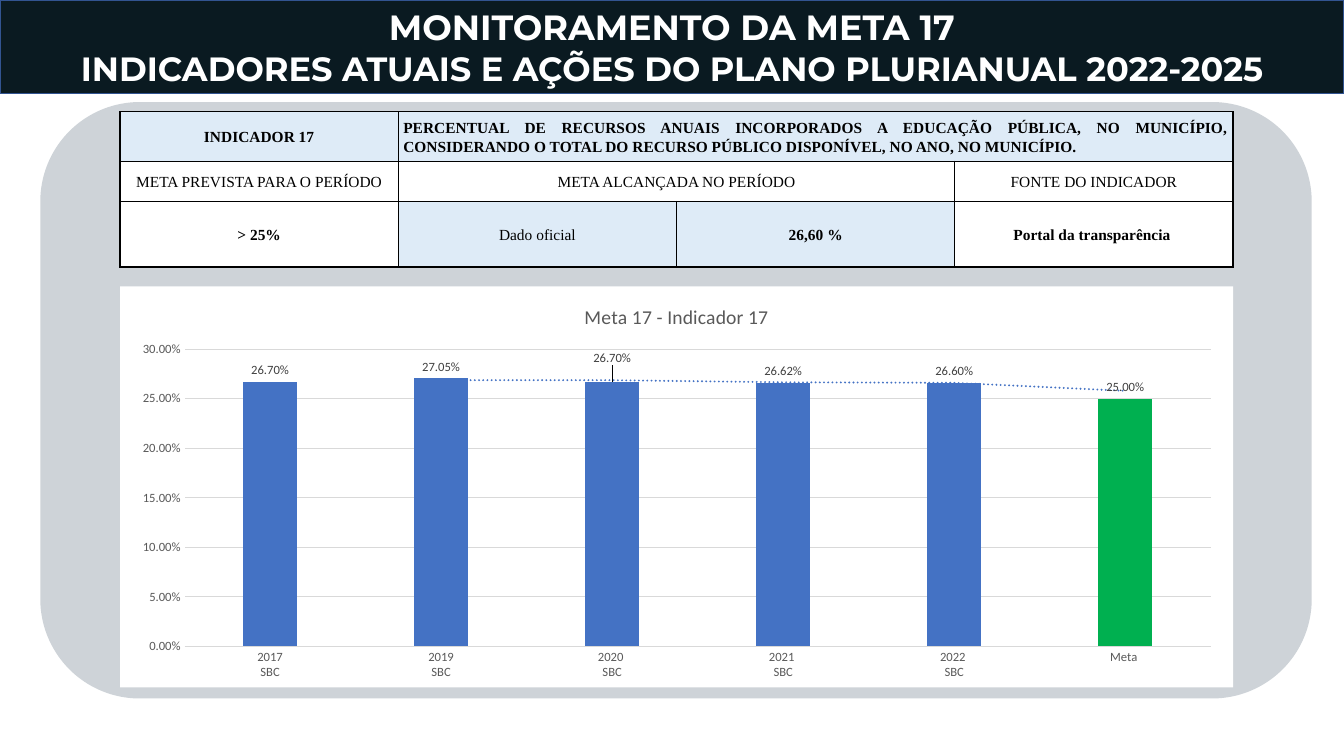
from lxml import etree
from pptx import Presentation
from pptx.chart.data import CategoryChartData
from pptx.dml.color import RGBColor
from pptx.enum.chart import XL_CHART_TYPE as Kind, XL_LABEL_POSITION as Spot, XL_TICK_MARK as Tick
from pptx.enum.shapes import MSO_SHAPE as Form
from pptx.enum.text import MSO_ANCHOR as Anchor, PP_ALIGN as Align
from pptx.oxml import parse_xml
from pptx.oxml.ns import qn
from pptx.util import Inches, Pt

WIDE, HIGH = Inches(13.33), Inches(7.5)
LEFT, SPAN = 0.0893, 0.8282  # shared by table and chart
NS = ('xmlns:a="http://schemas.openxmlformats.org/drawingml/2006/main" '
      'xmlns:c="http://schemas.openxmlformats.org/drawingml/2006/chart"')
SERIF, SANS = "Times New Roman", "Calibri"
PALE, WHITE, GRAY, RULE, BLUE = "DEEBF7", "FFFFFF", "595959", "D9D9D9", "4472C4"

# text, columns spanned, fill, bold
ROWS = [
    [("INDICADOR 17", 1, PALE, True),
     ("PERCENTUAL DE RECURSOS ANUAIS INCORPORADOS A EDUCAÇÃO PÚBLICA, NO MUNICÍPIO, "
      "CONSIDERANDO O TOTAL DO RECURSO PÚBLICO DISPONÍVEL, NO ANO, NO MUNICÍPIO.", 3, PALE, True)],
    [("META PREVISTA PARA O PERÍODO", 1, WHITE, False),
     ("META ALCANÇADA NO PERÍODO", 2, WHITE, False),
     ("FONTE DO INDICADOR", 1, WHITE, False)],
    [("> 25%", 1, WHITE, True), ("Dado oficial", 1, PALE, False),
     ("26,60 %", 1, PALE, True), ("Portal da transparência\u00a0", 1, WHITE, True)],
]
HEIGHTS = [0.49, 0.4, 0.65]
RATES = {"2017\nSBC": 0.267, "2019\nSBC": 0.2705, "2020 \nSBC": 0.267,
         "2021 \nSBC": 0.2662, "2022 \nSBC": 0.266, "Meta ": 0.25}


def tint(code):
    return RGBColor.from_string(code)


def area(left, top, wide, high):
    """Turn shares of the slide into lengths."""
    return int(left * WIDE), int(top * HIGH), int(wide * WIDE), int(high * HIGH)


def style(font, size, color, face=SANS, bold=False):
    font.size, font.name, font.bold = Pt(size), face, bold
    font.color.rgb = tint(color)


def write(par, text, align=Align.CENTER, lead=None, after=None, **look):
    par.alignment = align
    if lead:
        par.line_spacing = lead
    if after:
        par.space_after = Pt(after)
    run = par.add_run()
    run.text = text
    style(run.font, **look)


def panel(slide, form, place, fill, line=None):
    shape = slide.shapes.add_shape(form, *area(*place))
    shape.shadow.inherit = False
    shape.fill.solid()
    shape.fill.fore_color.rgb = tint(fill)
    if line:
        shape.line.color.rgb = tint(line)
        shape.line.width = Pt(1)
    else:
        shape.line.fill.background()
    return shape


def banner(slide):
    frame = panel(slide, Form.RECTANGLE, (0, 0, 1, 0.124), "0A1A21", "325491").text_frame
    frame.word_wrap, frame.vertical_anchor = True, Anchor.MIDDLE
    look = dict(color=WHITE, face="Montserrat", bold=True)
    write(frame.paragraphs[0], "MONITORAMENTO DA META 17", size=25, **look)
    write(frame.add_paragraph(), "INDICADORES ATUAIS E AÇÕES DO PLANO PLURIANUAL 2022-2025",
          size=24, **look)


def edge(cell):
    """Draw a thin black border round a cell."""
    props = cell._tc.get_or_add_tcPr()
    for side in "LRTB":
        props.append(parse_xml(
            f'<a:ln{side} {NS} w="12700"><a:solidFill><a:srgbClr val="000000"/>'
            f'</a:solidFill></a:ln{side}>'))


def grid(slide):
    place = area(LEFT, 0.148, SPAN, sum(HEIGHTS) / 7.5)
    table = slide.shapes.add_table(len(ROWS), 4, *place).table
    for r, row in enumerate(ROWS):
        table.rows[r].height = Inches(HEIGHTS[r])
        for c in range(4):
            edge(table.cell(r, c))
        col = 0
        for text, span, fill, bold in row:
            cell = table.cell(r, col)
            if span > 1:
                cell.merge(table.cell(r, col + span - 1))
            cell.fill.solid()
            cell.fill.fore_color.rgb = tint(fill)
            cell.vertical_anchor = Anchor.MIDDLE
            cell.margin_left = cell.margin_right = Inches(0.05)
            cell.margin_top, cell.margin_bottom = Inches(0.01), 0
            align = Align.JUSTIFY if span == 3 else Align.CENTER
            write(cell.text_frame.paragraphs[0], text, align, lead=1.07, after=8,
                  size=11, color="000000", face=SERIF, bold=bold)
            col += span


def layout(inner):
    return parse_xml(f'<c:layout {NS}><c:manualLayout>{inner}</c:manualLayout></c:layout>')


def axes(chart):
    cats, vals = chart.category_axis, chart.value_axis
    for axis in (cats, vals):
        axis.major_tick_mark = axis.minor_tick_mark = Tick.NONE
        style(axis.tick_labels.font, 9, GRAY)
    vals.minimum_scale, vals.maximum_scale, vals.major_unit = 0, 0.3, 0.05
    vals.tick_labels.number_format = "0.00%"
    vals.tick_labels.number_format_is_linked = False
    vals.format.line.fill.background()
    for line in (cats.format.line, vals.major_gridlines.format.line):
        line.color.rgb, line.width = tint(RULE), Pt(0.75)


def bars(plot):
    plot.gap_width, plot.overlap, plot.vary_by_categories = 219, -27, False
    ser = plot.series[0]
    goal = ser.points[len(RATES) - 1]
    for part, color in ((ser, BLUE), (goal, "00B050")):
        part.format.fill.solid()
        part.format.fill.fore_color.rgb = tint(color)
    tags = ser.data_labels
    tags.show_value, tags.position = True, Spot.OUTSIDE_END
    tags.number_format, tags.number_format_is_linked = "0.00%", False
    style(tags.font, 9, "404040")
    lifted = ser.points[2].data_label
    style(lifted.font, 9, "404040")
    lifted.position = Spot.OUTSIDE_END
    mark = ser._element.find(".//" + qn("c:dLbl"))
    mark.find(qn("c:idx")).addnext(layout('<c:x val="0"/><c:y val="-0.03"/>'))
    ser._element.find(qn("c:cat")).addprevious(parse_xml(
        f'<c:trendline {NS}><c:spPr><a:ln w="19050" cap="rnd"><a:solidFill>'
        f'<a:srgbClr val="{BLUE}"/></a:solidFill><a:prstDash val="sysDot"/></a:ln></c:spPr>'
        '<c:trendlineType val="movingAvg"/><c:period val="2"/>'
        '<c:dispRSqr val="0"/><c:dispEq val="0"/></c:trendline>'))


def graph(slide):
    data = CategoryChartData(number_format="0.00%")
    data.categories = list(RATES)
    data.add_series("Series 1", list(RATES.values()))
    place = area(LEFT, 0.3787, SPAN, 0.5307)
    chart = slide.shapes.add_chart(Kind.COLUMN_CLUSTERED, *place, data).chart
    chart.has_legend = False
    style(chart.font, 10, "000000")
    chart.has_title = True
    write(chart.chart_title.text_frame.paragraphs[0], "Meta 17 - Indicador 17",
          size=14, color=GRAY)
    axes(chart)
    bars(chart.plots[0])
    root = chart._chartSpace
    root.find(qn("c:chart")).addnext(parse_xml(
        f'<c:spPr {NS}><a:solidFill><a:srgbClr val="{WHITE}"/></a:solidFill>'
        '<a:ln><a:noFill/></a:ln></c:spPr>'))
    plot = root.find(".//" + qn("c:plotArea"))
    for old in plot.findall(qn("c:layout")):
        plot.remove(old)
    plot.insert(0, layout(
        '<c:layoutTarget val="inner"/><c:xMode val="edge"/><c:yMode val="edge"/>'
        '<c:x val="0.058"/><c:y val="0.157"/><c:w val="0.922"/><c:h val="0.741"/>'))


def main():
    deck = Presentation()
    deck.slide_width, deck.slide_height = WIDE, HIGH
    slide = deck.slides.add_slide(deck.slide_layouts[6])
    banner(slide)
    panel(slide, Form.ROUNDED_RECTANGLE, (0.03, 0.135, 0.946, 0.789), "CED3D8")
    grid(slide)
    graph(slide)
    deck.save("out.pptx")


if __name__ == "__main__":
    main()
